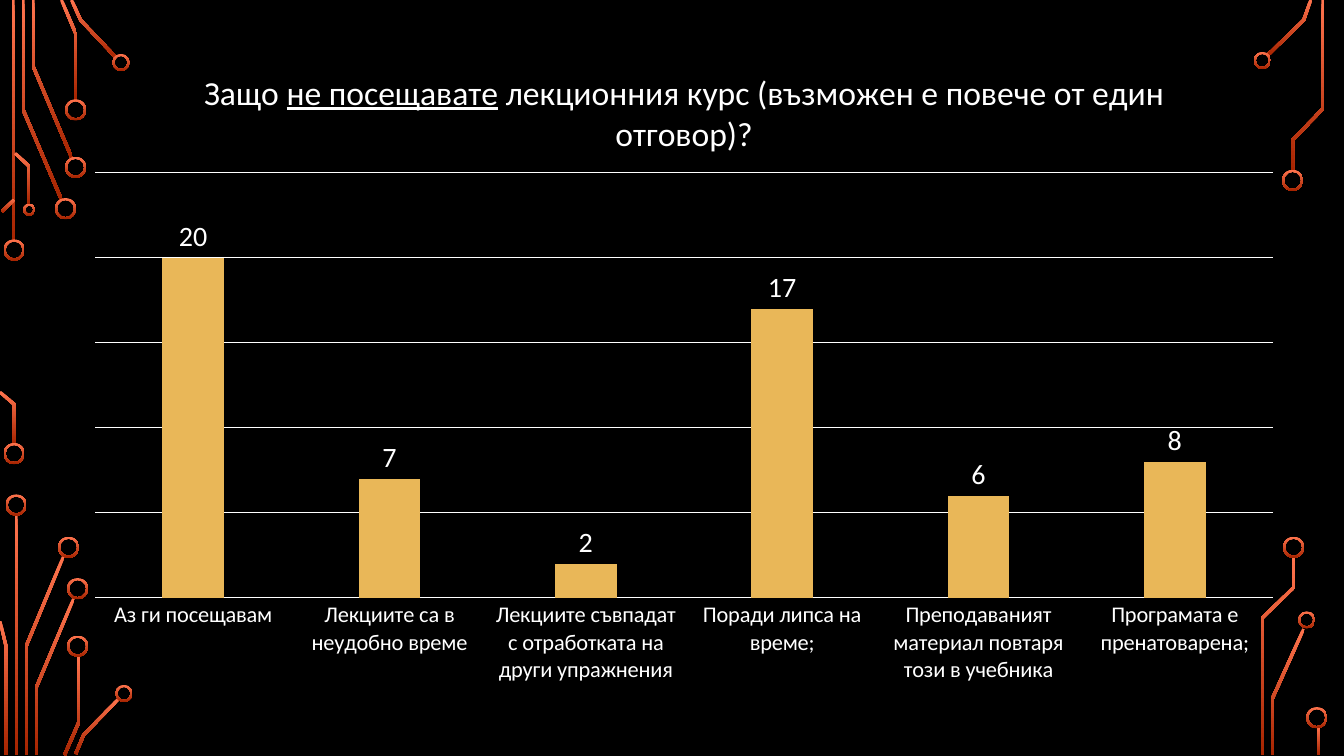
import math

import pptx
import pptx.chart.data
import pptx.dml.color
import pptx.enum.chart
import pptx.enum.shapes
import pptx.oxml
import pptx.util
from pptx.util import Inches

# Centre lines of the circuit traces, in inches
TRACES = [
    [(0.13, 0), (0.13, 2.4)],
    [(0.23, 0), (0.23, 1.09), (0.61, 1.98)],
    [(0.33, 0), (0.33, 0.66), (0.71, 1.56)],
    [(0.61, 0), (0.75, 0.33), (0.75, 1)],
    [(0.71, 0), (0.8, 0.2), (1.15, 0.57)],
    [(0.02, 2.1), (0.14, 1.98)],
    [(0, 3.89), (0.14, 4.01), (0.14, 4.41)],
    [(0.15, 1.52), (0.29, 1.65), (0.29, 2.03)],
    [(0.16, 5.1), (0.16, 7.49)],
    [(0.26, 7.49), (0.26, 6.41), (0.63, 5.52)],
    [(0, 6.16), (0.06, 6.41), (0.06, 7.49)],
    [(0.36, 7.49), (0.36, 6.82), (0.73, 5.94)],
    [(0.64, 7.49), (0.78, 7.17), (0.78, 6.5)],
    [(0.75, 7.48), (0.83, 7.29), (1.18, 6.93)],
    [(13, 0), (12.93, 0.2), (12.57, 0.55)],
    [(12.82, 1.69), (12.82, 1.39), (13.12, 1.08), (13.12, 0)],
    [(12.62, 7.49), (12.62, 6.93), (12.93, 6.24)],
    [(12.52, 7.49), (12.52, 6.13), (12.83, 5.83), (12.83, 5.52)],
    [(13.08, 7.21), (13.08, 7.49)],
]

# Ring diameter: ring centres
RINGS = {
    0.21: [(0.14, 2.48), (0.14, 4.5), (0.65, 2.07), (0.75, 1.66), (0.75, 1.09),
           (0.16, 5.01), (0.68, 5.43), (0.77, 5.84), (0.77, 6.41),
           (12.82, 1.79), (12.83, 5.43), (13.06, 7.12)],
    0.17: [(1.2, 0.62), (1.23, 6.88), (12.52, 0.6), (12.96, 6.15)],
    0.12: [(0.29, 2.08)],
}

ANSWERS = {
    "Аз ги посещавам": 20,
    "Лекциите са в неудобно време": 7,
    "Лекциите съвпадат с отработката на други упражнения": 2,
    "Поради липса на време;": 17,
    "Преподаваният материал повтаря този в учебника": 6,
    "Програмата е пренатоварена;": 8,
}


def rgb(value):
    return pptx.dml.color.RGBColor.from_string(value)


def ribbon(points, width):
    """Return the outline of a band of the given width along a centre line."""
    normals = []
    for (x0, y0), (x1, y1) in zip(points, points[1:]):
        length = math.hypot(x1 - x0, y1 - y0)
        normals.append(((y0 - y1) / length, (x1 - x0) / length))
    left, right = [], []
    for (x, y), (ax, ay), (bx, by) in zip(
            points, normals[:1] + normals, normals + normals[-1:]):
        k = width / 2 / (1 + ax * bx + ay * by)
        dx, dy = k * (ax + bx), k * (ay + by)
        left.append((x + dx, y + dy))
        right.append((x - dx, y - dy))
    return left + right[::-1]


class Deck:
    font_name = "Calibri"
    white = "FFFFFF"
    bar = "E9B758"
    glow = ("FF744E", "A62400")
    stroke = 0.03
    ring_stroke = 0.02

    def __init__(self):
        self.prs = pptx.Presentation()
        self.prs.slide_width = Inches(13.33)
        self.prs.slide_height = Inches(7.5)
        self.s = self.prs.slides.add_slide(self.prs.slide_layouts[6])
        fill = self.s.background.fill
        fill.solid()
        fill.fore_color.rgb = rgb("000000")

    def font(self, f, size, bold=False, underline=None):
        f.name, f.size, f.bold = self.font_name, pptx.util.Pt(size), bold
        f.color.rgb = rgb(self.white)
        if underline is not None:
            f.underline = underline

    def text(self, p, text, **fmt):
        r = p.add_run()
        r.text = text
        self.font(r.font, **fmt)

    def line(self, line):
        line.color.rgb = rgb(self.white)
        line.width = pptx.util.Pt(0.75)

    def paint(self, sp):
        """Give a circuit part its top-to-bottom gradient."""
        sp.shadow.inherit = False
        sp.line.fill.background()
        sp.fill.gradient()
        sp.fill.gradient_angle = 270
        for stop, color in zip(sp.fill.gradient_stops, self.glow):
            stop.color.rgb = rgb(color)

    def trace(self, points):
        outline = [(Inches(x), Inches(y)) for x, y in ribbon(points, self.stroke)]
        builder = self.s.shapes.build_freeform(*outline[0])
        builder.add_line_segments(outline[1:], close=True)
        self.paint(builder.convert_to_shape())

    def ring(self, x, y, size):
        sp = self.s.shapes.add_shape(
            pptx.enum.shapes.MSO_SHAPE.DONUT, Inches(x - size / 2),
            Inches(y - size / 2), Inches(size), Inches(size))
        sp.adjustments[0] = self.ring_stroke / size
        self.paint(sp)

    def column_chart(self, answers, title, x, y, w, h):
        """Add a column chart; title is a list of (text, underline) pairs."""
        data = pptx.chart.data.CategoryChartData()
        data.categories = list(answers)
        data.add_series("Series 1", list(answers.values()))
        enum = pptx.enum.chart
        chart = self.s.shapes.add_chart(
            enum.XL_CHART_TYPE.COLUMN_CLUSTERED, Inches(x), Inches(y),
            Inches(w), Inches(h), data).chart
        self.font(chart.font, 10)
        chart.has_legend = False
        chart.has_title = True
        p = chart.chart_title.text_frame.paragraphs[0]
        for part, underline in title:
            self.text(p, part, size=24, underline=underline)
        chart.chart_title.include_in_layout = False

        cat = chart.category_axis
        cat.major_tick_mark = enum.XL_TICK_MARK.NONE
        self.font(cat.tick_labels.font, 16)
        self.line(cat.format.line)
        val = chart.value_axis
        val.minimum_scale, val.maximum_scale, val.major_unit = 0, 25, 5
        val.has_major_gridlines = True
        self.line(val.major_gridlines.format.line)
        val.visible = False

        plot = chart.plots[0]
        plot.gap_width, plot.overlap = 219, -27
        plot.vary_by_categories = False
        fill = plot.series[0].format.fill
        fill.solid()
        fill.fore_color.rgb = rgb(self.bar)
        plot.has_data_labels = True
        labels = plot.data_labels
        labels.show_value = True
        labels.position = enum.XL_LABEL_POSITION.OUTSIDE_END
        self.font(labels.font, 20)
        self.plot_area(chart, x=0.02, y=0.19, w=0.96, h=0.66)

    def plot_area(self, chart, **fractions):
        """Fix the inner plot area as fractions of the chart."""
        ns = "http://schemas.openxmlformats.org/drawingml/2006/chart"
        modes = "".join(f'<c:{k}Mode val="edge"/>' for k in "xy")
        sizes = "".join(f'<c:{k} val="{v}"/>' for k, v in fractions.items())
        layout = pptx.oxml.parse_xml(
            f'<c:layout xmlns:c="{ns}"><c:manualLayout>'
            f'<c:layoutTarget val="inner"/>{modes}{sizes}'
            f'</c:manualLayout></c:layout>')
        area = chart.plots[0]._element.getparent()
        for old in area.findall(f"{{{ns}}}layout"):
            area.remove(old)
        area.insert(0, layout)


def main():
    deck = Deck()
    for points in TRACES:
        deck.trace(points)
    for size, centres in RINGS.items():
        for x, y in centres:
            deck.ring(x, y, size)
    title = [("Защо ", False), ("не посещавате", True),
             (" лекционния курс (възможен е повече от един отговор)?", False)]
    deck.column_chart(ANSWERS, title, 0.7, 0.5, 12.17, 6.39)
    deck.prs.save("out.pptx")


if __name__ == "__main__":
    main()
